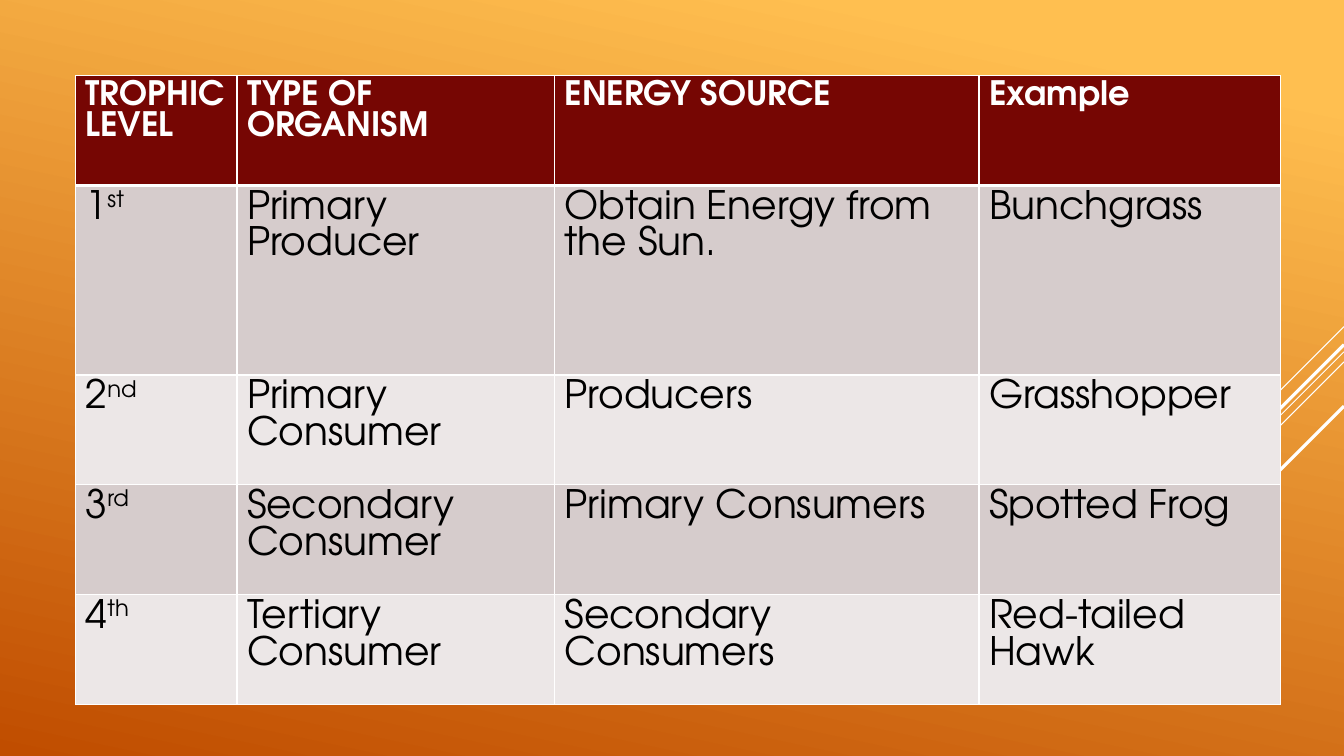
"""Builds a slide with a table of trophic levels in a food chain."""
from lxml import etree
from pptx import Presentation
from pptx.dml.color import RGBColor
from pptx.enum import shapes
from pptx.oxml import ns
from pptx.util import Inches, Pt

FONT = "TeX Gyre Adventor"
COLORS = {
    "light orange": "FFBF50", "dark orange": "C04D00", "white": "FFFFFF",
    "black": "000000", "header": "760603", "odd row": "D6CCCC", "even row": "ECE7E7",
}
STREAKS = [(3.24, 1.0, 0.75), (3.49, 3.26, 0.75), (3.59, 2.07, 0.75),
           (3.42, 1.91, 2.25), (4.03, 1.39, 2.25)]
COLUMN_WIDTHS = [1.6, 3.15, 4.21, 2.99]
ROW_HEIGHTS = [1.09, 1.88, 1.09, 1.09, 1.09]
HEADERS = ["TROPHIC LEVEL", "TYPE OF ORGANISM", "ENERGY SOURCE", "Example"]
LEVELS = [
    (("1", "st"), "Primary Producer", "Obtain Energy from the Sun.", "Bunchgrass"),
    (("2", "nd"), "Primary Consumer", "Producers", "Grasshopper"),
    (("3", "rd"), "Secondary Consumer", "Primary Consumers", "Spotted Frog"),
    (("4", "th"), "Tertiary Consumer", "Secondary Consumers", "Red-tailed Hawk"),
]


def color(name):
    return RGBColor.from_string(COLORS[name])


def paint_background(slide):
    fill = slide.background.fill
    fill.gradient()
    fill.gradient_angle = 258
    stops = [(0.1, "light orange"), (1, "dark orange")]
    for stop, (position, name) in zip(fill.gradient_stops, stops):
        stop.position = position
        stop.color.rgb = color(name)


def add_streak(slide, top, length, width):
    right = 13.33
    streak = slide.shapes.add_connector(
        shapes.MSO_CONNECTOR.STRAIGHT, Inches(right), Inches(top),
        Inches(right - length), Inches(top + length))
    streak.line.color.rgb = color("white")
    streak.line.width = Pt(width)
    etree.SubElement(streak._element.spPr, ns.qn("a:effectLst"))


def set_borders(cell, top, bottom):
    properties = cell._tc.get_or_add_tcPr()
    widths = {"lnL": 1, "lnR": 1, "lnT": top, "lnB": bottom}
    for index, (side, width) in enumerate(widths.items()):
        border = etree.Element(ns.qn(f"a:{side}"), w=str(Pt(width)))
        fill = etree.SubElement(border, ns.qn("a:solidFill"))
        etree.SubElement(fill, ns.qn("a:srgbClr"), val=COLORS["white"])
        properties.insert(index, border)


def write_cell(cell, content, size, text_color, bold):
    base, *suffix = [content] if isinstance(content, str) else content
    paragraph = cell.text_frame.paragraphs[0]
    paragraph.text = base
    for ending in suffix:
        run = paragraph.add_run()
        run.text = ending
        run._r.get_or_add_rPr().set("baseline", "30000")
    for run in paragraph.runs:
        run.font.name = FONT
        run.font.size = Pt(size)
        run.font.bold = bold
        run.font.color.rgb = color(text_color)


def add_trophic_table(slide):
    rows = [HEADERS, *LEVELS]
    table = slide.shapes.add_table(
        len(rows), len(HEADERS), Inches(0.75), Inches(0.75),
        Inches(sum(COLUMN_WIDTHS)), Inches(sum(ROW_HEIGHTS))).table
    for column, width in zip(table.columns, COLUMN_WIDTHS):
        column.width = Inches(width)
    for index, (row, height, contents) in enumerate(zip(table.rows, ROW_HEIGHTS, rows)):
        row.height = Inches(height)
        header = index == 0
        band = "header" if header else "odd row" if index % 2 else "even row"
        for cell, content in zip(row.cells, contents):
            cell.fill.solid()
            cell.fill.fore_color.rgb = color(band)
            set_borders(cell, 3 if index == 1 else 1, 3 if header else 1)
            write_cell(cell, content, 24 if header else 28,
                       "white" if header else "black", header)


def main():
    presentation = Presentation()
    presentation.slide_width = Inches(13.33)
    presentation.slide_height = Inches(7.5)
    slide = presentation.slides.add_slide(presentation.slide_layouts[6])
    paint_background(slide)
    for streak in STREAKS:
        add_streak(slide, *streak)
    add_trophic_table(slide)
    presentation.save("out.pptx")


if __name__ == "__main__":
    main()
